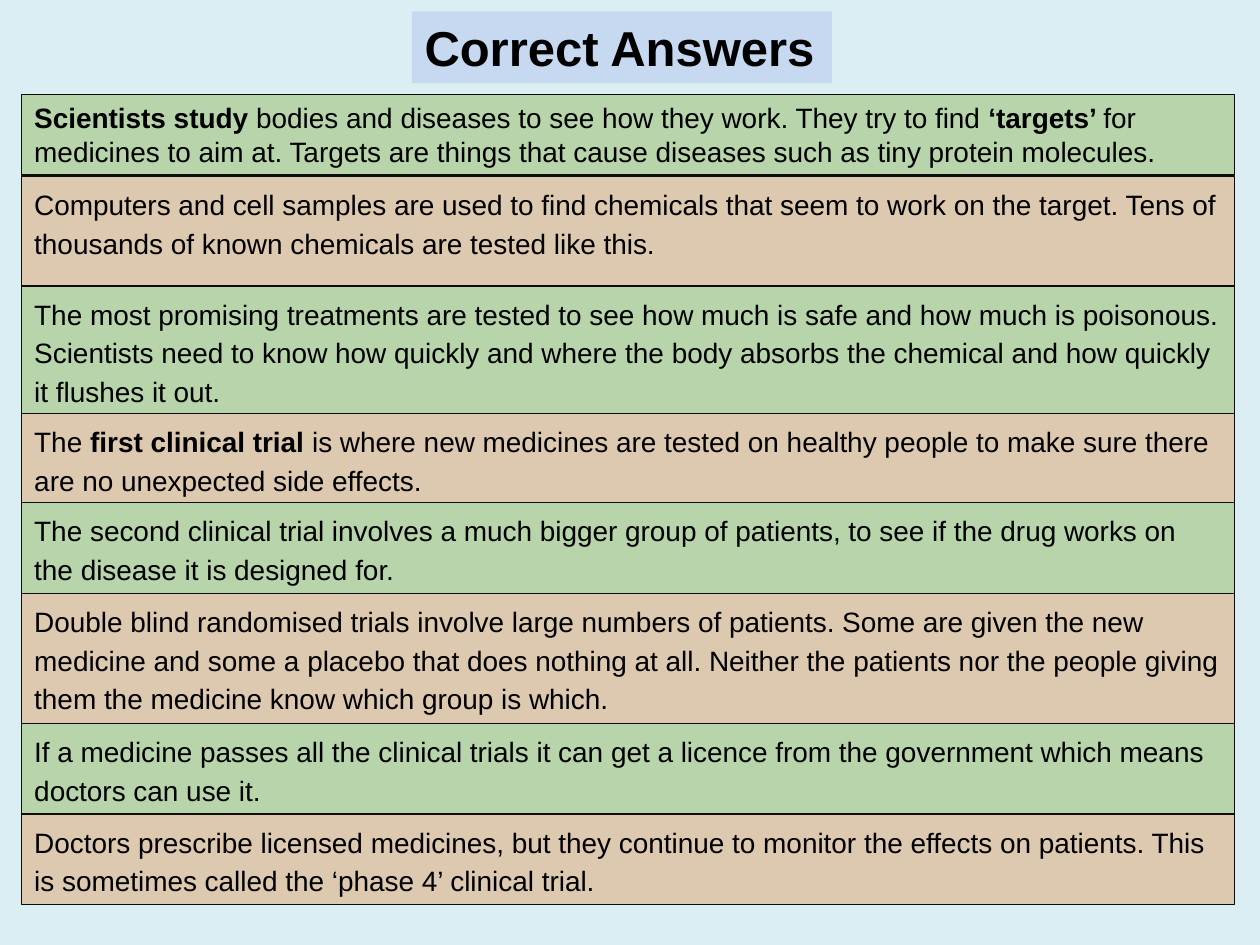
from itertools import cycle
from lxml.etree import SubElement
from pptx import Presentation
from pptx.dml.color import RGBColor as RGB
from pptx.enum.shapes import MSO_SHAPE as Shape
from pptx.enum.text import MSO_ANCHOR as Anchor, MSO_AUTO_SIZE as Fit, PP_ALIGN as Align
from pptx.oxml.ns import qn
from pptx.util import Pt

COLORS = {"back": "DBEEF4", "title": "C6D9F1", "green": "669900",
          "orange": "E46C0A", "line": "0D0D0D", "text": "000000"}
ALPHA = {"green": 30, "orange": 29}

# Height and text of each answer; asterisks enclose bold words.
ANSWERS = [
    (46.8, "*Scientists study *bodies and diseases to see how they work. They try to find "
           "*‘targets’ *for medicines to aim at. Targets are things that cause diseases "
           "such as tiny protein molecules."),
    (62.6, "Computers and cell samples are used to find chemicals that seem to work on the "
           "target. Tens of thousands of known chemicals are tested like this."),
    (72.8, "The most promising treatments are tested to see how much is safe and how much is "
           "poisonous. Scientists need to know how quickly and where the body absorbs the "
           "chemical and how quickly it flushes it out."),
    (51.1, "The *first clinical trial *is where new medicines are tested on healthy people to "
           "make sure there are no unexpected side effects."),
    (51.8, "The second clinical trial involves a much bigger group of patients, to see if the "
           "drug works on the disease it is designed for."),
    (74.2, "Double blind randomised trials involve large numbers of patients. Some are given "
           "the new medicine and some a placebo that does nothing at all. Neither the patients "
           "nor the people giving them the medicine know which group is which."),
    (51.8, "If a medicine passes all the clinical trials it can get a licence from the "
           "government which means doctors can use it."),
    (51.8, "Doctors prescribe licensed medicines, but they continue to monitor the effects on "
           "patients. This is sometimes called the ‘phase 4’ clinical trial."),
]


def paint(fill, name, alpha=None):
    fill.solid()
    fill.fore_color.rgb = RGB.from_string(COLORS[name])
    if alpha:
        color = fill._xPr.find(qn("a:solidFill"))[0]
        SubElement(color, qn("a:alpha"), val=str(alpha * 1000))


def write(shape, text, size=16, bold=False, anchor=Anchor.TOP, lead=1, after=0):
    """Fill the shape with text; asterisks switch bold on and off."""
    frame = shape.text_frame
    frame.word_wrap, frame.auto_size = True, Fit.NONE
    frame.vertical_anchor = anchor
    para = frame.paragraphs[0]
    para.alignment = Align.LEFT
    para.line_spacing, para.space_after = lead, Pt(after)
    for i, part in enumerate(text.split("*")):
        if part:
            run = para.add_run()
            run.text = part
            font = run.font
            font.name, font.size = "Arial", Pt(size)
            font.bold = bold or i % 2 == 1
            font.color.rgb = RGB.from_string(COLORS["text"])


def add_title(slide, left, top, width, height):
    title = slide.shapes.title
    title.left, title.top = Pt(left), Pt(top)
    title.width, title.height = Pt(width), Pt(height)
    paint(title.fill, "title")
    write(title, "Correct Answers", size=28, bold=True, anchor=Anchor.MIDDLE)


def add_rows(slide, left, top, width):
    """Stack the answers downwards in alternating colours."""
    for i, ((height, text), name) in enumerate(zip(ANSWERS, cycle(ALPHA))):
        gap = 0.8 if i == 0 else 0
        box = slide.shapes.add_shape(Shape.RECTANGLE, Pt(left), Pt(top),
                                     Pt(width), Pt(height - gap))
        box.shadow.inherit = False
        paint(box.fill, name, ALPHA[name])
        paint(box.line.fill, "line")
        box.line.width = Pt(0.75)
        if i == 0:
            write(box, text)
        else:
            write(box, text, lead=1.15, after=10)
        top += height


def main():
    deck = Presentation()
    deck.slide_width, deck.slide_height = Pt(720), Pt(540)
    slide = deck.slides.add_slide(deck.slide_layouts[5])
    paint(slide.background.fill, "back")
    add_title(slide, 235.4, 6.5, 240, 41)
    add_rows(slide, 12.5, 54, 693)
    deck.save("out.pptx")


if __name__ == "__main__":
    main()
